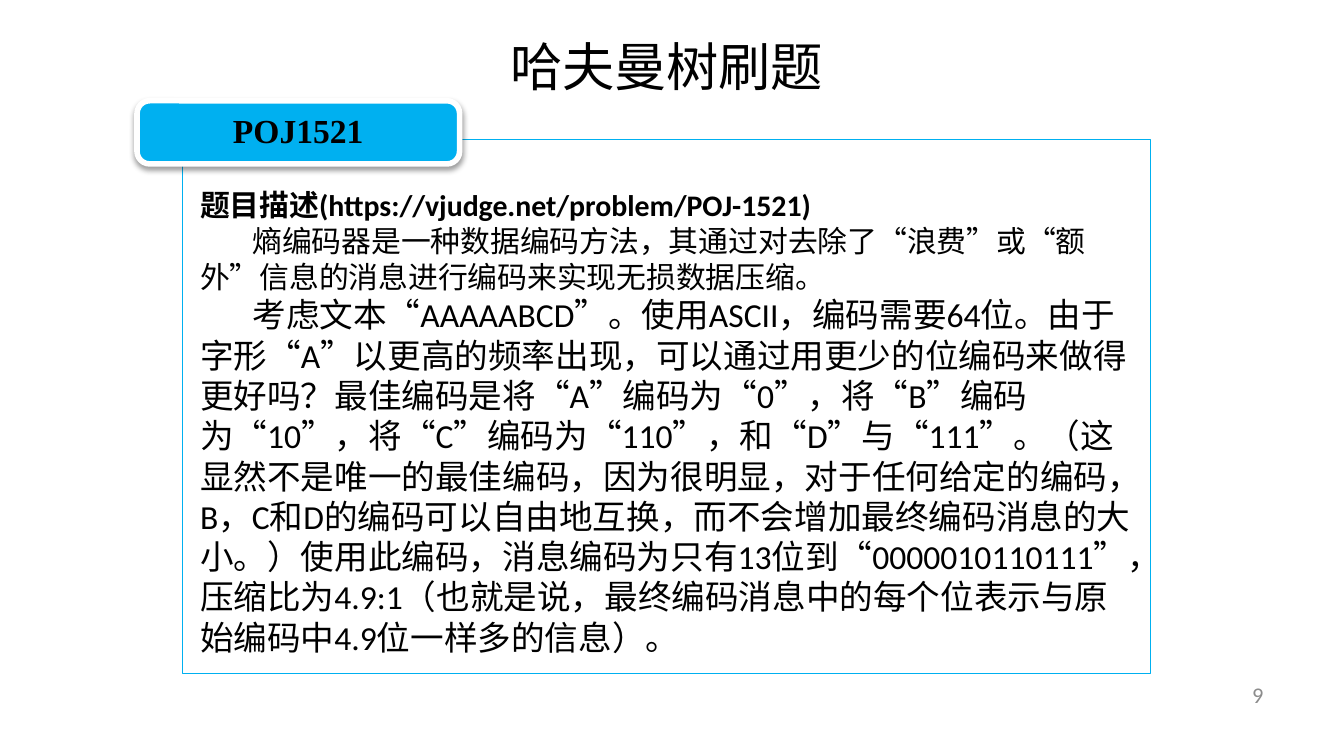
from lxml import etree
from pptx import Presentation, util as u
from pptx.dml.color import RGBColor
from pptx.enum import shapes, text
from pptx.oxml import parse_xml
from pptx.oxml.ns import nsdecls, qn

# Content
TITLE = "哈夫曼树刷题"
BADGE = "POJ1521"
PAGE_NUMBER = "9"
BODY = [  # text, size, bold, first-line indent
    ("题目描述(https://vjudge.net/problem/POJ-1521)", 16, True, 0),
    ("熵编码器是一种数据编码方法，其通过对去除了“浪费”或“额外”信息的消息"
     "进行编码来实现无损数据压缩。", 16, False, 0.39),
    ("考虑文本“AAAAABCD”。使用ASCII，编码需要64位。由于字形“A”以更高的频率出现，"
     "可以通过用更少的位编码来做得更好吗？最佳编码是将“A”编码为“0”，将“B”编码为“10”，"
     "将“C”编码为“110”，和“D”与“111”。（这显然不是唯一的最佳编码，因为很明显，"
     "对于任何给定的编码，B，C和D的编码可以自由地互换，而不会增加最终编码消息的大小。）"
     "使用此编码，消息编码为只有13位到“0000010110111”，压缩比为4.9:1"
     "（也就是说，最终编码消息中的每个位表示与原始编码中4.9位一样多的信息）。\u00a0",
     18, False, 0.39),
]

# Style
BLACK = RGBColor(0x00, 0x00, 0x00)
WHITE = RGBColor(0xFF, 0xFF, 0xFF)
GRAY = RGBColor(0x8C, 0x8C, 0x8C)
BLUE = RGBColor(0x00, 0xB0, 0xF0)
CJK = "Noto Sans CJK SC"
LATIN = "Calibri"
SERIF = "Times New Roman"

# Layout in inches: left, top, width, height
SLIDE = (10, 10 * 9 / 16)  # widescreen
TITLE_AREA = (3.31, 0.04, 3.3, 0.67)
PANEL_AREA = (1.36, 1.04, 7.2, 3.97)
BADGE_AREA = (1.02, 0.75, 2.4, 0.47)
BODY_AREA = (1.39, 1.34, 7.2, 3.9)
NUMBER_AREA = (7.17, 5.02, 2.33, 0.3)


def inches(area):
    return [u.Inches(value) for value in area]


def write(para, content, size, font=LATIN, color=BLACK, bold=False,
          align=text.PP_ALIGN.LEFT, spacing=1.0, indent=0):
    """Fill a paragraph with one formatted span."""
    para.alignment = align
    para.line_spacing = spacing
    if indent:
        properties = para._p.get_or_add_pPr()
        properties.set("marL", "0")
        properties.set("indent", str(u.Inches(indent)))
    span = para.add_run()
    span.text = content
    span.font.size = u.Pt(size)
    span.font.name = font
    span.font.bold = bold
    span.font.color.rgb = color
    run_properties = span._r.get_or_add_rPr()
    run_properties.set("lang", "zh-CN")
    etree.SubElement(run_properties, qn("a:ea")).set("typeface", CJK)


def add_box(page, kind, area, fill, line, width):
    box = page.shapes.add_shape(kind, *inches(area))
    box.shadow.inherit = False
    box.fill.solid()
    box.fill.fore_color.rgb = fill
    box.line.color.rgb = line
    box.line.width = u.Pt(width)
    return box


def add_shadow(box):
    effects = box._element.spPr.find(qn("a:effectLst"))
    effects.append(parse_xml(
        f'<a:outerShdw {nsdecls("a")} blurRad="{u.Pt(3.1)}" dist="{u.Pt(1.6)}" '
        'dir="5400000" rotWithShape="0"><a:srgbClr val="000000">'
        '<a:alpha val="38000"/></a:srgbClr></a:outerShdw>'))


def main():
    deck = Presentation()
    deck.slide_width, deck.slide_height = inches(SLIDE)
    page = deck.slides.add_slide(deck.slide_layouts[5])

    # Title
    title = page.shapes.title
    title.left, title.top, title.width, title.height = inches(TITLE_AREA)
    title.text_frame.vertical_anchor = text.MSO_ANCHOR.TOP
    write(title.text_frame.paragraphs[0], TITLE, 28, font=CJK,
          align=text.PP_ALIGN.CENTER, spacing=1.35)

    # Panel and its badge
    add_box(page, shapes.MSO_SHAPE.RECTANGLE, PANEL_AREA, WHITE, BLUE, 0.75)
    badge = add_box(page, shapes.MSO_SHAPE.ROUNDED_RECTANGLE, BADGE_AREA,
                    BLUE, WHITE, 3)
    badge.adjustments[0] = 0.2
    add_shadow(badge)
    frame = badge.text_frame
    frame.margin_left = frame.margin_right = u.Inches(0.24)
    frame.margin_top = frame.margin_bottom = u.Inches(0.06)
    frame.vertical_anchor = text.MSO_ANCHOR.MIDDLE
    write(frame.paragraphs[0], BADGE, 18, font=SERIF, bold=True,
          align=text.PP_ALIGN.CENTER, spacing=0.9)

    # Problem statement
    frame = page.shapes.add_textbox(*inches(BODY_AREA)).text_frame
    frame.word_wrap = True
    for index, (content, size, bold, indent) in enumerate(BODY):
        para = frame.add_paragraph() if index else frame.paragraphs[0]
        write(para, content, size, bold=bold, indent=indent)

    # Page number
    frame = page.shapes.add_textbox(*inches(NUMBER_AREA)).text_frame
    frame.word_wrap = True
    frame.vertical_anchor = text.MSO_ANCHOR.MIDDLE
    write(frame.paragraphs[0], PAGE_NUMBER, 12, color=GRAY,
          align=text.PP_ALIGN.RIGHT)

    deck.save("out.pptx")


if __name__ == "__main__":
    main()
